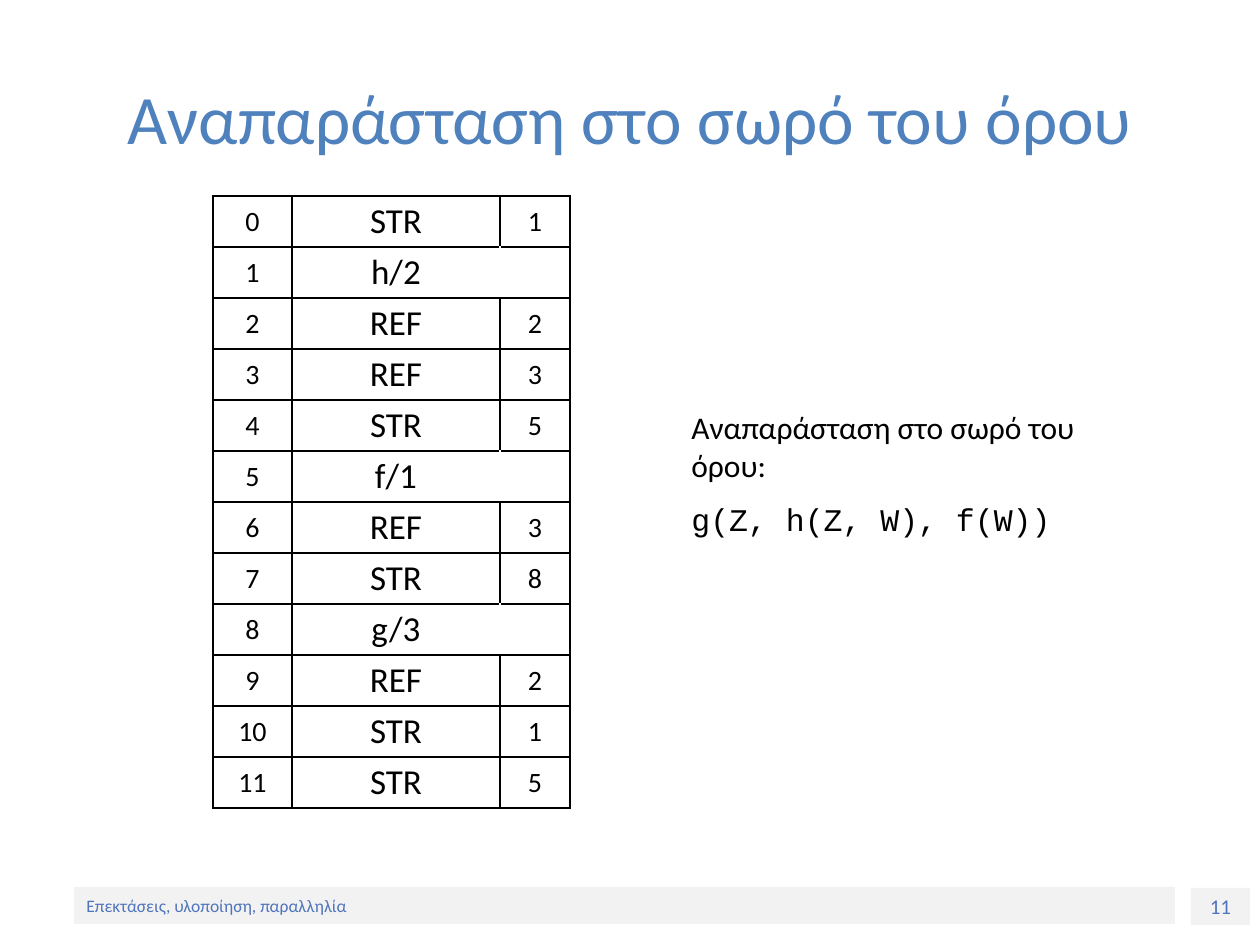
import pptx
import pptx.dml.color
import pptx.enum.shapes
import pptx.enum.text
import pptx.oxml
import pptx.oxml.ns
import pptx.util

ALIGN = pptx.enum.text.PP_ALIGN
MIDDLE = pptx.enum.text.MSO_ANCHOR.MIDDLE

# Content
TITLE = "Αναπαράσταση στο σωρό του όρου"
# A heap cell holds a tag and a value; a functor cell has no value
HEAP = [
    ("STR", "1"), ("h/2", ""), ("REF", "2"), ("REF", "3"),
    ("STR", "5"), ("f/1", ""), ("REF", "3"), ("STR", "8"),
    ("g/3", ""), ("REF", "2"), ("STR", "1"), ("STR", "5"),
]
CAPTION = "Αναπαράσταση στο σωρό του όρου:"
TERM = "g(Z, h(Z, W), f(W))"
# text, (left, top, width, height), size, alignment
FOOTERS = [
    ("11", (1191, 888, 59, 37), 12, ALIGN.CENTER),
    ("Επεκτάσεις, υλοποίηση, παραλληλία", (74, 887, 1101, 37), 10, ALIGN.LEFT),
]

# Layout in px
TITLE_BOX = (63, 38, 1134, 157)
CAPTION_BOX = (679, 349, 427, 248)
HEAP_LEFT, HEAP_TOP, HEAP_ROW = 213, 196, 51
HEAP_COLUMNS = (79, 208, 70)
HEAP_SIZES = (16, 20, 16)
BLACK, WHITE = "000000", "FFFFFF"


def px(length):
    return round(length * 914400 / 126)


def color(value):
    return pptx.dml.color.RGBColor.from_string(value)


def write(paragraph, text, size, font="Calibri", fill=BLACK,
          align=ALIGN.LEFT, before=0):
    paragraph.alignment = align
    paragraph.space_before = pptx.util.Pt(before)
    run = paragraph.add_run()
    run.text = text
    run.font.size = pptx.util.Pt(size)
    run.font.name = font
    run.font.color.rgb = color(fill)


def border(cell, **sides):
    properties = cell._tc.get_or_add_tcPr()
    for index, side in enumerate("LRTB"):
        line = pptx.oxml.parse_xml(
            f'<a:ln{side} {pptx.oxml.ns.nsdecls("a")} w="12700"><a:solidFill>'
            f'<a:srgbClr val="{sides.get(side, BLACK)}"/></a:solidFill></a:ln{side}>')
        properties.insert(index, line)


deck = pptx.Presentation()
deck.slide_width, deck.slide_height = px(1260), px(945)
slide = deck.slides.add_slide(deck.slide_layouts[5])

# Footer bars
for text, box, size, align in FOOTERS:
    bar = slide.shapes.add_shape(
        pptx.enum.shapes.MSO_SHAPE.RECTANGLE, *map(px, box))
    bar.shadow.inherit = False
    bar.fill.solid()
    bar.fill.fore_color.rgb = color("F2F2F2")
    bar.line.fill.background()
    bar.text_frame.vertical_anchor = MIDDLE
    write(bar.text_frame.paragraphs[0], text, size, fill="5075BC", align=align)

# Title
title = slide.shapes.title
title.left, title.top, title.width, title.height = map(px, TITLE_BOX)
title.text_frame.vertical_anchor = MIDDLE
write(title.text_frame.paragraphs[0], TITLE, 39.6, fill="4F81BD",
      align=ALIGN.CENTER, before=20)

# Heap table
heap = slide.shapes.add_table(
    len(HEAP), len(HEAP_COLUMNS), px(HEAP_LEFT), px(HEAP_TOP),
    px(sum(HEAP_COLUMNS)), px(HEAP_ROW * len(HEAP))).table
heap.first_row = heap.horz_banding = False
for column, width in zip(heap.columns, HEAP_COLUMNS):
    column.width = px(width)
for address, (tag, value) in enumerate(HEAP):
    heap.rows[address].height = px(HEAP_ROW)
    divider = BLACK if value else WHITE
    edges = ({}, {"R": divider}, {"L": divider})
    for col, text in enumerate((str(address), tag, value)):
        cell = heap.cell(address, col)
        cell.fill.background()
        cell.vertical_anchor = MIDDLE
        cell.margin_left = cell.margin_right = px(9)
        cell.margin_top = cell.margin_bottom = px(4)
        border(cell, **edges[col])
        if text:
            write(cell.text_frame.paragraphs[0], text, HEAP_SIZES[col],
                  align=ALIGN.CENTER)

# Caption with the term
caption = slide.shapes.add_textbox(*map(px, CAPTION_BOX)).text_frame
caption.word_wrap = True
caption.vertical_anchor = MIDDLE
write(caption.paragraphs[0], CAPTION, 18, before=9)
write(caption.add_paragraph(), TERM, 18, font="Courier New", before=9)

deck.save("out.pptx")
